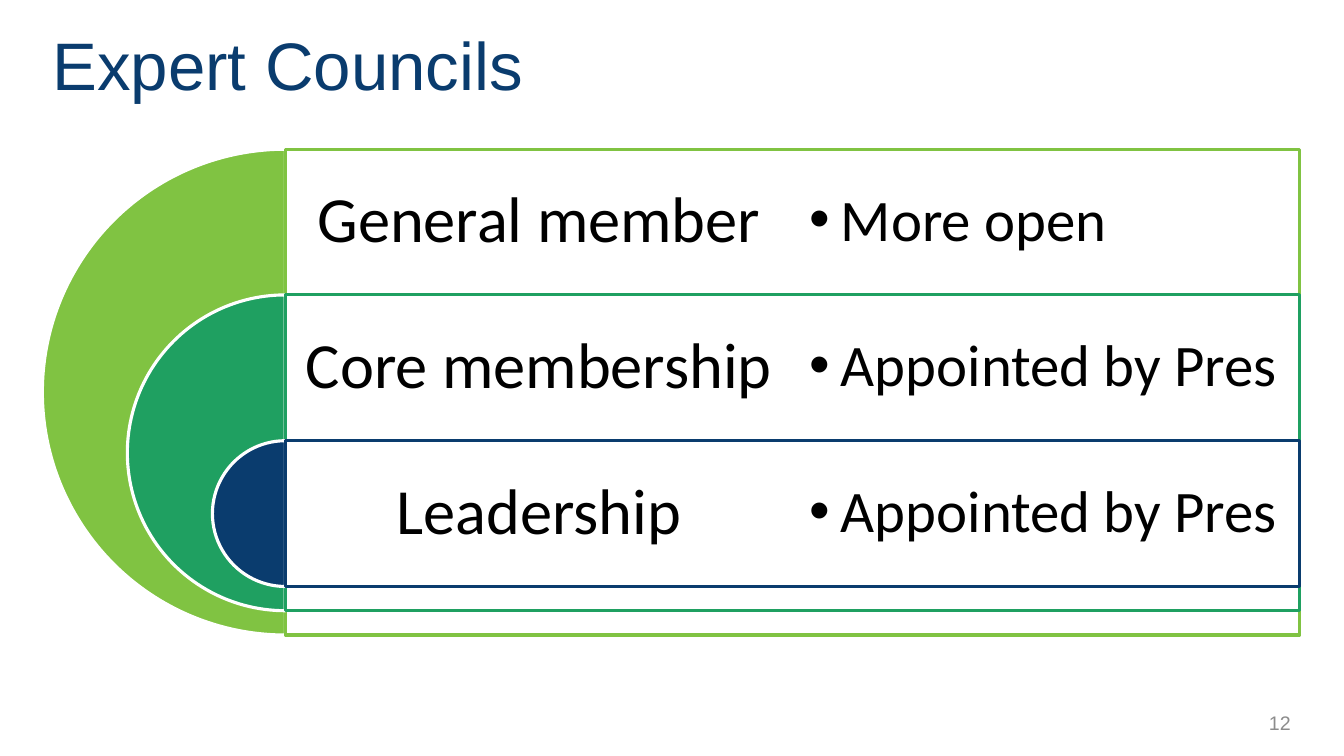
"""Build the Expert Councils slide: nested half rings with a row for each council level."""
from lxml.etree import SubElement
from pptx import Presentation
from pptx.dml.color import RGBColor
from pptx.enum.shapes import MSO_SHAPE as Shape
from pptx.enum.text import MSO_ANCHOR as Anchor, PP_ALIGN as Align
from pptx.oxml.ns import qn
from pptx.util import Inches, Pt

TITLE = "Expert Councils"
PAGE_NUMBER = "12"
LEVELS = [
    ("General member", "More open", "80C342"),
    ("Core membership", "Appointed by Pres", "1FA061"),
    ("Leadership", "Appointed by Pres", "0A3C6E"),
]
FORMATS = {
    "title": {"size": Pt(48), "name": "Arial", "color": "0A3C6E"},
    "level": {"size": Pt(46), "name": "Calibri", "color": "000000"},
    "detail": {"size": Pt(42), "name": "Calibri", "color": "000000"},
    "page": {"size": Pt(14), "name": "Arial", "color": "8C8C8C"},
}
WIDTH, HEIGHT = 13.33, 7.5
AXIS, TOP, DIAMETER = 2.83, 1.48, 4.82
ROW_SHARE, RING_STEP = 0.3, 0.35
ROW = DIAMETER * ROW_SHARE
COLUMN = 5.03
BULLET_INDENT = Inches(0.31)


def color(value):
    return RGBColor.from_string(value)


def place(shape, left, top, width, height):
    shape.left, shape.top = Inches(left), Inches(top)
    shape.width, shape.height = Inches(width), Inches(height)


def write(shape, text, style, align, inset=0.1, spacing=1.0, bullet=False):
    frame = shape.text_frame
    frame.word_wrap = True
    frame.vertical_anchor = Anchor.MIDDLE
    for side in ("left", "right", "top", "bottom"):
        setattr(frame, f"margin_{side}", Inches(inset if spacing < 1 or side in ("left", "right") else 0.05))
    paragraph = frame.paragraphs[0]
    paragraph.text = text
    paragraph.alignment = align
    paragraph.line_spacing = spacing
    if bullet:
        properties = paragraph._p.get_or_add_pPr()
        properties.set("marL", str(BULLET_INDENT))
        properties.set("indent", str(-BULLET_INDENT))
        SubElement(properties, qn("a:buFont"), typeface="Arial")
        SubElement(properties, qn("a:buChar"), char="•")
    font = paragraph.runs[0].font
    for key, value in FORMATS[style].items():
        if key == "color":
            font.color.rgb = color(value)
        else:
            setattr(font, key, value)


def add_box(slide, area, *text, **layout):
    box = slide.shapes.add_textbox(*(Inches(length) for length in area))
    write(box, *text, **layout)


def add_panel(slide, kind, area, fill, line):
    shape = slide.shapes.add_shape(kind, *(Inches(length) for length in area))
    shape.shadow.inherit = False
    shape.fill.solid()
    shape.fill.fore_color.rgb = color(fill)
    shape.line.color.rgb = color(line)
    shape.line.width = Pt(2.25)
    return shape


def add_level(slide, index, name, detail, shade):
    top = TOP + index * ROW
    diameter = DIAMETER * (1 - index * RING_STEP)
    ring = add_panel(slide, Shape.PIE, (AXIS - diameter / 2, top, diameter, diameter), shade, "FFFFFF")
    ring.adjustments[0], ring.adjustments[1] = 54, 162
    add_panel(slide, Shape.RECTANGLE, (AXIS, top, 2 * COLUMN, diameter), "FFFFFF", shade)
    add_box(slide, (AXIS, top, COLUMN, ROW), name, "level", Align.CENTER, inset=0.19, spacing=0.9)
    add_box(slide, (AXIS + COLUMN, top, COLUMN, ROW), detail, "detail", Align.LEFT,
            inset=0.17, spacing=0.9, bullet=True)


def main():
    presentation = Presentation()
    presentation.slide_width, presentation.slide_height = Inches(WIDTH), Inches(HEIGHT)
    slide = presentation.slides.add_slide(presentation.slide_layouts[5])
    title = slide.shapes.title
    place(title, 0.42, 0.17, 12.74, 0.93)
    write(title, TITLE, "title", Align.LEFT)
    for index, level in enumerate(LEVELS):
        add_level(slide, index, *level)
    add_box(slide, (10.64, 6.97, 2.26, 0.4), PAGE_NUMBER, "page", Align.RIGHT)
    presentation.save("out.pptx")


if __name__ == "__main__":
    main()
